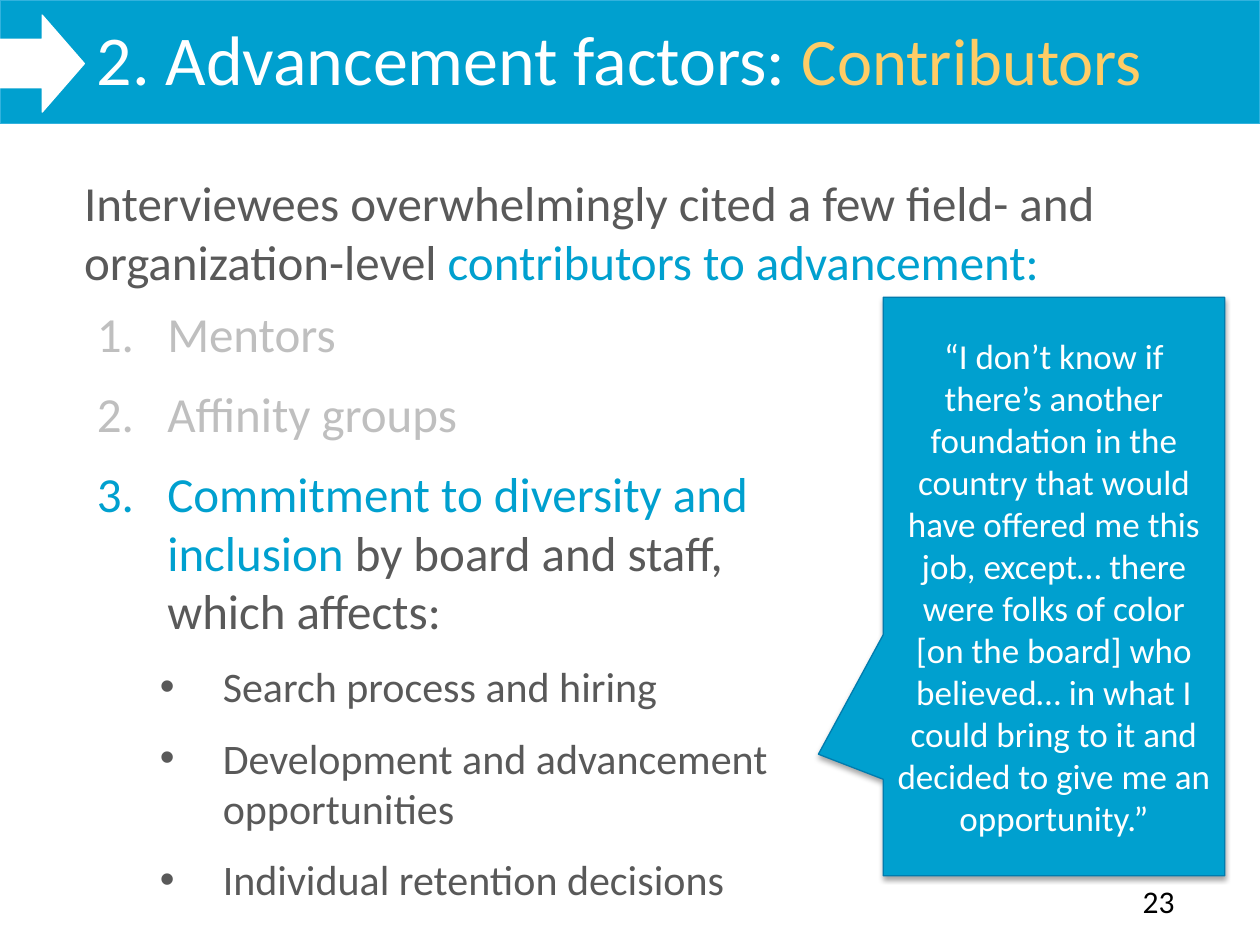
"""Build the slide on contributors to advancement."""
import pptx
import pptx.util
import pptx.dml.color
import pptx.enum.shapes
import pptx.enum.text
import pptx.oxml
import pptx.oxml.ns
import lxml.etree

Inches, Pt = pptx.util.Inches, pptx.util.Pt
Kind = pptx.enum.shapes.MSO_SHAPE
Align = pptx.enum.text.PP_ALIGN
Anchor = pptx.enum.text.MSO_ANCHOR

BLUE, GREY, PALE, WHITE, GOLD = "00A0CF", "595959", "BFBFBF", "FFFFFF", "FFCC66"

TITLE = [("2. Advancement factors: ", WHITE, 40), ("Contributors", GOLD, 38)]
INTRO = [
    ("Interviewees overwhelmingly cited a few field- and organization-level ", GREY),
    ("contributors to advancement:", BLUE),
]
FACTORS = [
    [("Mentors", PALE)],
    [("Affinity groups", PALE)],
    [("Commitment to diversity and inclusion ", BLUE),
     ("by board and staff, which affects:", GREY)],
]
EFFECTS = [
    "Search process and hiring",
    "Development and advancement opportunities",
    "Individual retention decisions",
]
QUOTE = (
    "“I don’t know if there’s another foundation in the country that would have "
    "offered me this job, except… there were folks of color [on the board] who "
    "believed… in what I could bring to it and decided to give me an opportunity.”"
)
NUMBER = [("buFont", {"typeface": "+mj-lt"}), ("buAutoNum", {"type": "arabicPeriod"})]
BULLET = [("buFont", {"typeface": "Arial"}), ("buChar", {"char": "•"})]
SHADOW = (
    '<a:effectLst xmlns:a="http://schemas.openxmlformats.org/drawingml/2006/main">'
    '<a:outerShdw blurRad="39370" dist="22860" dir="5400000" rotWithShape="0">'
    '<a:srgbClr val="000000"><a:alpha val="35000"/></a:srgbClr>'
    '</a:outerShdw></a:effectLst>'
)


def color(code):
    return pptx.dml.color.RGBColor.from_string(code)


def add_block(slide, kind, at, fill, line):
    block = slide.shapes.add_shape(kind, *map(Inches, at))
    block.shadow.inherit = False
    block.fill.solid()
    block.fill.fore_color.rgb = color(fill)
    block.line.color.rgb = color(line)
    block.line.width = Pt(0.75)
    return block


def add_box(slide, at):
    frame = slide.shapes.add_textbox(*map(Inches, at)).text_frame
    frame.word_wrap = True
    return frame


def indent(para, left, hang, marks=()):
    props = para._p.get_or_add_pPr()
    props.set("marL", str(Inches(left)))
    props.set("indent", str(-Inches(hang)))
    for tag, attrs in marks:
        lxml.etree.SubElement(props, pptx.oxml.ns.qn("a:" + tag), attrs)


def write(para, runs, size):
    para.font.name = "Calibri"
    para.font.size = Pt(size)
    for text, code, *own in runs:
        run = para.add_run()
        run.text = text
        run.font.color.rgb = color(code)
        if own:
            run.font.size = Pt(own[0])


def add_list(frame, items):
    for i, (runs, size, level, left, hang, marks) in enumerate(items):
        para = frame.add_paragraph() if i else frame.paragraphs[0]
        para.level = level
        para.space_after = Pt(12)
        indent(para, left, hang, marks)
        write(para, runs, size)


def main():
    deck = pptx.Presentation()
    deck.slide_width, deck.slide_height = Inches(10), Inches(7.5)
    slide = deck.slides.add_slide(deck.slide_layouts[6])

    add_block(slide, Kind.RECTANGLE, (0, 0, 10, 0.98), BLUE, "32B2DD")
    add_block(slide, Kind.RIGHT_ARROW, (0, 0.12, 0.67, 0.77), WHITE, WHITE)

    title = add_box(slide, (0.67, 0.07, 9.33, 1.25)).paragraphs[0]
    indent(title, 0.5, 0.5)
    write(title, TITLE, 40)

    page = add_box(slide, (8.97, 6.95, 0.53, 0.4)).paragraphs[0]
    write(page, [("23", "000000")], 18)

    intro = add_box(slide, (0.57, 1.32, 9.43, 1.04)).paragraphs[0]
    intro.space_after = Pt(12)
    write(intro, INTRO, 28)

    call = add_block(slide, Kind.RECTANGULAR_CALLOUT, (7.01, 2.36, 2.71, 4.59),
                     BLUE, "007CAE")
    call.adjustments[0], call.adjustments[1] = -0.69, 0.29
    props = call._element.spPr
    props.replace(props.find(pptx.oxml.ns.qn("a:effectLst")),
                  pptx.oxml.parse_xml(SHADOW))
    call.text_frame.word_wrap = True
    call.text_frame.vertical_anchor = Anchor.MIDDLE
    quote = call.text_frame.paragraphs[0]
    quote.alignment = Align.CENTER
    write(quote, [(QUOTE, WHITE)], 20)

    items = [(runs, 28, 0, 0.56, 0.56, NUMBER) for runs in FACTORS]
    items += [([(text, GREY)], 24, 1, 1, 0.5, BULLET) for text in EFFECTS]
    add_list(add_box(slide, (0.67, 2.36, 5.9, 4.91)), items)

    deck.save("out.pptx")


if __name__ == "__main__":
    main()
